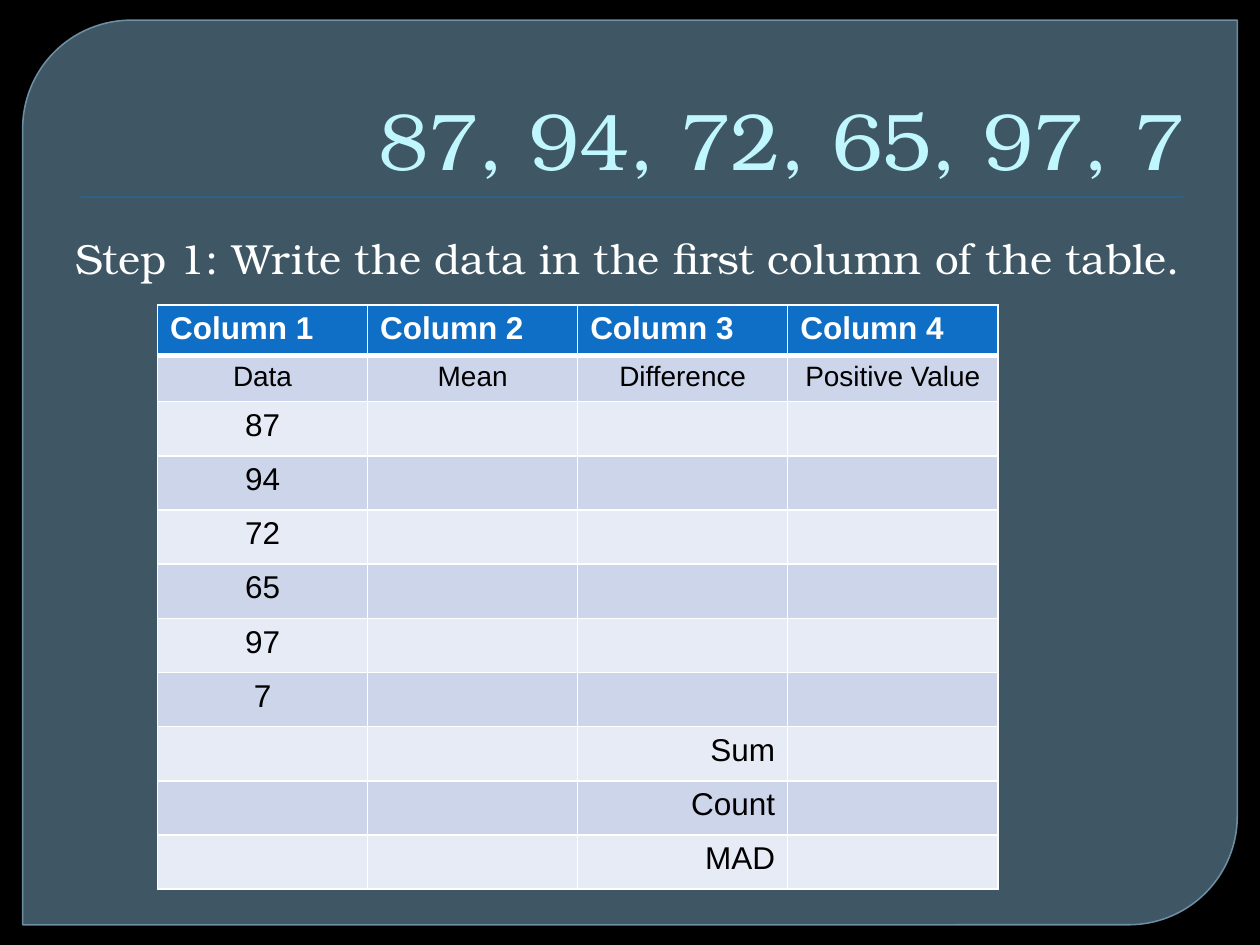
import pptx
import pptx.util
import pptx.dml.color
import pptx.enum.shapes
import pptx.enum.text
import pptx.oxml.ns
from lxml import etree

Inches = pptx.util.Inches
Pt = pptx.util.Pt
ALIGN = pptx.enum.text.PP_ALIGN
SHAPE = pptx.enum.shapes.MSO_SHAPE
qn = pptx.oxml.ns.qn

COLORS = {
    "background": "000000",
    "panel": "61869C",
    "panel_line": "779BB2",
    "accent": "0F6FC6",
    "title": "C0F7FF",
    "white": "FFFFFF",
    "black": "000000",
    "dark_band": "CCD5EA",
    "light_band": "E7EBF5",
}
SERIF = "TeX Gyre Bonum"
SANS = "Arial"

DATA = ["87", "94", "72", "65", "97", "7"]
HEADERS = ["Column 1", "Column 2", "Column 3", "Column 4"]
LABELS = ["Data", "Mean", "Difference", "Positive Value"]
SUMMARY = ["Sum", "Count", "MAD"]


def rgb(name):
    return pptx.dml.color.RGBColor.from_string(COLORS[name])


def set_fill(fill, color):
    fill.solid()
    fill.fore_color.rgb = rgb(color)


def set_alpha(fill_parent, percent):
    """Make the solid fill directly under an XML element translucent."""
    color = fill_parent.find(qn("a:solidFill"))[0]
    etree.SubElement(color, qn("a:alpha"), val=str(percent * 1000))


def write(tf, text, size, color, font, align=ALIGN.LEFT, bold=False):
    tf.text = text
    p = tf.paragraphs[0]
    p.alignment = align
    for r in p.runs:
        r.font.size = Pt(size)
        r.font.name = font
        r.font.bold = bold
        r.font.color.rgb = rgb(color)
    return p


def set_indent(p, left, first):
    pPr = p._p.get_or_add_pPr()
    pPr.set("marL", str(Inches(left)))
    pPr.set("indent", str(Inches(first)))


def add_panel(s):
    """Add the translucent panel behind everything else."""
    sp = s.shapes.add_shape(SHAPE.ROUND_2_DIAG_RECTANGLE, Inches(0.18), Inches(0.16),
                            Inches(9.64), Inches(7.18))
    sp.shadow.inherit = False
    sp.adjustments[0] = 0.12
    sp.adjustments[1] = 0
    set_fill(sp.fill, "panel")
    set_alpha(sp._element.spPr, 65)
    set_fill(sp.line.fill, "panel_line")
    sp.line.width = Pt(0.87)
    set_alpha(sp.line._ln, 88)
    s.shapes._spTree.insert(2, sp._element)


def add_rule(s):
    sp = s.shapes.add_shape(SHAPE.RECTANGLE, Inches(0.64), Inches(1.56),
                            Inches(8.75), Inches(0.01))
    sp.shadow.inherit = False
    set_fill(sp.fill, "accent")
    sp.line.fill.background()


def set_title(s, text):
    title = s.shapes.title
    title.left, title.top = Inches(0.5), Inches(0.28)
    title.width, title.height = Inches(9), Inches(1.25)
    tf = title.text_frame
    tf.vertical_anchor = pptx.enum.text.MSO_ANCHOR.BOTTOM
    p = write(tf, text, 46, "title", SERIF, ALIGN.RIGHT)
    set_indent(p, 0.06, 0)


def add_step(s, text):
    sp = s.shapes.add_textbox(Inches(0.5), Inches(1.8), Inches(9.08), Inches(0.7))
    tf = sp.text_frame
    tf.word_wrap = True
    p = write(tf, text, 24, "white", SERIF)
    set_indent(p, 0.32, -0.32)


def set_borders(cell, top, bottom):
    tcPr = cell._tc.get_or_add_tcPr()
    for side, width in (("L", 1), ("R", 1), ("T", top), ("B", bottom)):
        ln = etree.SubElement(tcPr, qn(f"a:ln{side}"), w=str(Pt(width)))
        fill = etree.SubElement(ln, qn("a:solidFill"))
        etree.SubElement(fill, qn("a:srgbClr"), val=COLORS["white"])


def add_table(s):
    rows = [HEADERS, LABELS]
    rows += [[value, "", "", ""] for value in DATA]
    rows += [["", "", label, ""] for label in SUMMARY]
    heights = [0.39, 0.35] + [0.43] * (len(rows) - 2)
    table = s.shapes.add_table(len(rows), len(HEADERS), Inches(1.25), Inches(2.42),
                               Inches(6.67), Inches(sum(heights))).table
    for i, (row, height) in enumerate(zip(rows, heights)):
        table.rows[i].height = Inches(height)
        header = i == 0
        band = "dark_band" if i % 2 else "light_band"
        for j, text in enumerate(row):
            cell = table.cell(i, j)
            set_borders(cell, 3 if i == 1 else 1, 3 if header else 1)
            set_fill(cell.fill, "accent" if header else band)
            if header:
                align = ALIGN.LEFT
            else:
                align = ALIGN.RIGHT if text in SUMMARY else ALIGN.CENTER
            write(cell.text_frame, text, 16 if i == 1 else 18,
                  "white" if header else "black", SANS, align, header)


def main():
    prs = pptx.Presentation()
    prs.slide_width, prs.slide_height = Inches(10), Inches(7.5)
    s = prs.slides.add_slide(prs.slide_layouts[5])
    set_fill(s.background.fill, "background")
    add_panel(s)
    add_rule(s)
    set_title(s, ", ".join(DATA))
    add_step(s, "Step 1: Write the data in the first column of the table.")
    add_table(s)
    prs.save("out.pptx")


if __name__ == "__main__":
    main()
